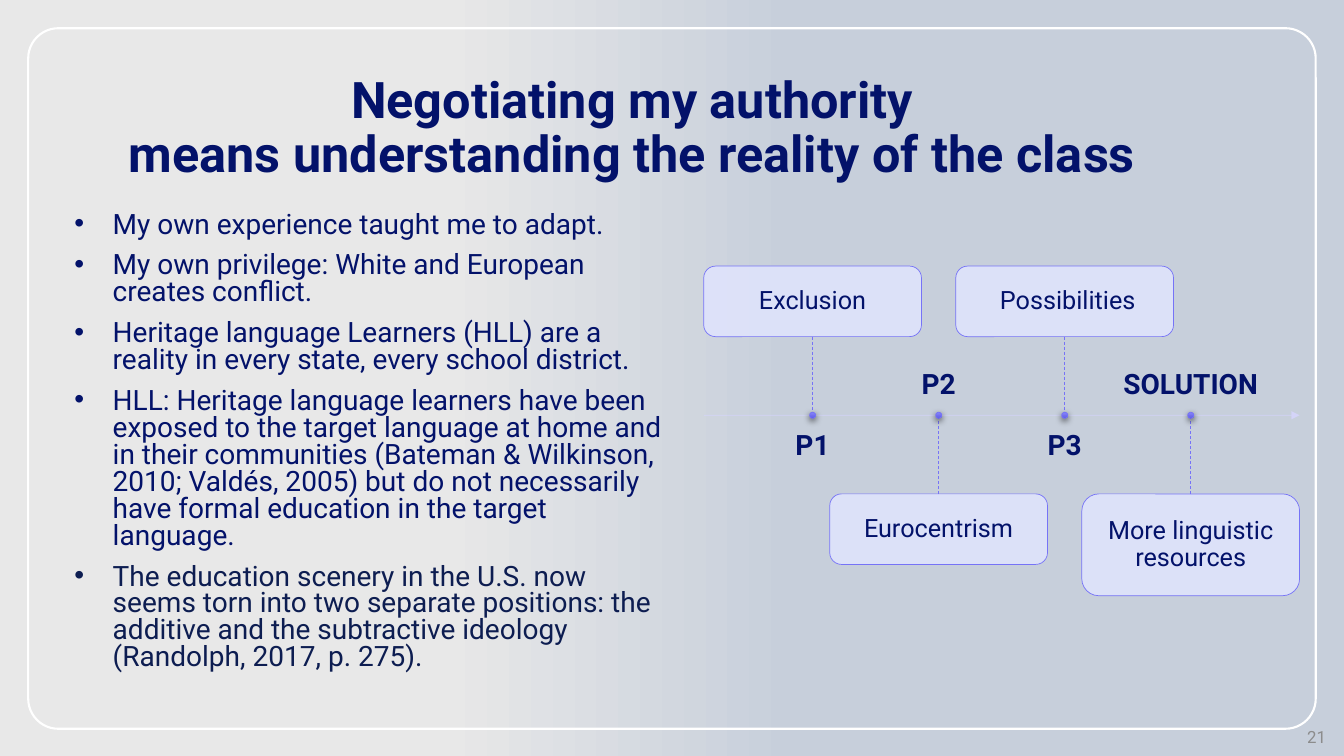
from lxml.etree import SubElement
from pptx import Presentation
from pptx.dml.color import RGBColor
from pptx.enum.dml import MSO_LINE
from pptx.enum.shapes import MSO_CONNECTOR, MSO_SHAPE
from pptx.enum.text import MSO_ANCHOR as ANCHOR, PP_ALIGN as ALIGN
from pptx.oxml.ns import qn
from pptx.util import Pt

PX = 9144  # 100 px to the inch
FONT = "Roboto"
NAVY = RGBColor(0x03, 0x12, 0x6A)
DARK_NAVY = RGBColor(0x0D, 0x1D, 0x51)
GREY = RGBColor(0x8C, 0x8C, 0x8C)
WHITE = RGBColor(0xFF, 0xFF, 0xFF)
BG_LEFT = RGBColor(0xE8, 0xE8, 0xE8)
BG_RIGHT = RGBColor(0xC7, 0xCF, 0xDB)
CARD = RGBColor(0xDF, 0xE3, 0xFC)
VIOLET = RGBColor(0x76, 0x73, 0xF7)
DOT_TOP = RGBColor(0x88, 0x86, 0xFA)
DOT_BOTTOM = RGBColor(0x60, 0x5D, 0xE5)
AXIS = RGBColor(0xD6, 0xD5, 0xFC)

AXIS_Y, AXIS_LEFT, AXIS_RIGHT = 412, 698, 1289
CARD_W, STEP, STEM = 216, 125, 78

BULLETS = [
    "My own experience taught me to adapt.",
    "My own privilege: White and European creates conflict.",
    "Heritage language Learners (HLL) are a reality in every state, every school district.",
    "HLL: Heritage language learners have been exposed to the target language at home and "
    "in their communities (Bateman & Wilkinson, 2010; Valdés, 2005) but do not necessarily "
    "have formal education in the target language.",
    "The education scenery in the U.S. now seems torn into two separate positions: the "
    "additive and the subtractive ideology (Randolph, 2017, p. 275).",
]
MILESTONES = [  # label, card text, card height
    ("P1", "Exclusion", 70),
    ("P2", "Eurocentrism", 70),
    ("P3", " Possibilities", 70),
    ("SOLUTION", "More linguistic resources", 101),
]


def emu(*lengths):
    return [n * PX for n in lengths]


def set_all(obj, values):
    for name, value in values.items():
        setattr(obj, name, value)


def write(tf, lines, size, color=NAVY, bold=False, align=ALIGN.CENTER,
          anchor=ANCHOR.TOP, spacing=0.9, inset=None):
    set_all(tf, {"word_wrap": True, "vertical_anchor": anchor})
    if inset is not None:
        for side in ("left", "top", "right", "bottom"):
            setattr(tf, f"margin_{side}", inset * PX)
    for i, line in enumerate(lines):
        p = tf.paragraphs[0] if i == 0 else tf.add_paragraph()
        p.text = line
        set_all(p, {"alignment": align, "line_spacing": spacing})
        for r in p.runs:
            set_all(r.font, {"name": FONT, "size": Pt(size), "bold": bold})
            r.font.color.rgb = color


def add_text(s, box, lines, size, **style):
    tf = s.shapes.add_textbox(*emu(*box)).text_frame
    write(tf, lines, size, **style)
    return tf


def set_line(shape, color, width):
    shape.line.color.rgb = color
    shape.line.width = Pt(width)


def set_alpha(fill_parent, percent):
    color = fill_parent.find(qn("a:solidFill"))[0]
    SubElement(color, qn("a:alpha"), val=str(percent * 1000))


def set_gradient(fill, angle, stops):
    fill.gradient()
    fill.gradient_angle = angle
    for stop, (position, color) in zip(fill.gradient_stops, stops):
        stop.position = position
        stop.color.rgb = color


def add_line(s, *ends, color):
    line = s.shapes.add_connector(MSO_CONNECTOR.STRAIGHT, *emu(*ends))
    set_line(line, color, 0.5)
    SubElement(line._element.spPr, qn("a:effectLst"))
    return line


def add_frame(s):
    frame = s.shapes.add_shape(MSO_SHAPE.ROUNDED_RECTANGLE, *emu(28, 28, 1277, 695))
    frame.adjustments[0] = 0.043
    frame.shadow.inherit = False
    frame.fill.background()
    set_line(frame, WHITE, 1.5)


def add_bullets(s):
    tf = add_text(s, (64, 206, 603, 447), BULLETS, 20, align=ALIGN.LEFT, spacing=0.8)
    for p in tf.paragraphs:
        p.space_before = Pt(10)
        pPr = p._p.get_or_add_pPr()
        pPr.set("marL", str(38 * PX))
        pPr.set("indent", str(-38 * PX))
        SubElement(pPr, qn("a:buFont"), typeface="Arial")
        SubElement(pPr, qn("a:buChar"), char="•")
    tf.paragraphs[-1].runs[0].font.color.rgb = DARK_NAVY


def add_axis(s):
    axis = add_line(s, AXIS_LEFT, AXIS_Y, AXIS_RIGHT, AXIS_Y, color=AXIS)
    ln = axis.line._get_or_add_ln()
    set_alpha(ln, 90)
    SubElement(ln, qn("a:tailEnd"), type="triangle")


def add_card(s, x, y, height, text):
    card = s.shapes.add_shape(MSO_SHAPE.ROUNDED_RECTANGLE, *emu(x, y, CARD_W, height))
    card.shadow.inherit = False
    card.fill.solid()
    card.fill.fore_color.rgb = CARD
    set_alpha(card._element.spPr, 90)
    set_line(card, VIOLET, 0.5)
    write(card.text_frame, [text], 18, anchor=ANCHOR.MIDDLE, inset=20)
    return card


def add_dot(s, x):
    dot = s.shapes.add_shape(MSO_SHAPE.OVAL, *emu(x - 3, AXIS_Y - 3, 6, 6))
    set_gradient(dot.fill, 270, [(0, DOT_TOP), (1, DOT_BOTTOM)])
    set_line(dot, VIOLET, 0.5)
    effects = SubElement(dot._element.spPr, qn("a:effectLst"))
    shadow = SubElement(effects, qn("a:outerShdw"), blurRad=str(Pt(4.5)),
                        dist=str(Pt(1.5)), dir="5400000", rotWithShape="0")
    black = SubElement(shadow, qn("a:srgbClr"), val="000000")
    SubElement(black, qn("a:alpha"), val="63000")


def add_milestone(s, i, label, text, height):
    """Cards alternate above and below the axis, labels on the other side."""
    above = i % 2 == 0
    x = AXIS_LEFT + i * STEP
    mid = x + CARD_W // 2
    card_y = AXIS_Y - STEM - height if above else AXIS_Y + STEM
    card = add_card(s, x, card_y, height, text)
    edge = AXIS_Y - STEM if above else AXIS_Y + STEM
    stem = add_line(s, mid, edge, mid, AXIS_Y, color=VIOLET)
    stem.line.dash_style = MSO_LINE.DASH
    stem.begin_connect(card, 2 if above else 0)
    add_text(s, (mid - 95, 428 if above else 351, 190, 46), [label], 20, bold=True,
             anchor=ANCHOR.TOP if above else ANCHOR.BOTTOM, inset=0)
    add_dot(s, mid)


def main():
    prs = Presentation()
    prs.slide_width, prs.slide_height = emu(1333, 750)
    s = prs.slides.add_slide(prs.slide_layouts[6])
    set_gradient(s.background.fill, 0, [(0.33, BG_LEFT), (0.59, BG_RIGHT)])
    add_frame(s)
    add_text(s, (1025, 718, 300, 25), ["21"], 12, color=GREY, align=ALIGN.RIGHT,
             anchor=ANCHOR.MIDDLE, spacing=1.0)
    add_axis(s)
    for i, milestone in enumerate(MILESTONES):
        add_milestone(s, i, *milestone)
    add_bullets(s)
    add_text(s, (89, 134, 1076, 53),
             ["Negotiating my authority\vmeans understanding the reality of the class"],
             36, bold=True, anchor=ANCHOR.BOTTOM)
    prs.save("out.pptx")


if __name__ == "__main__":
    main()
